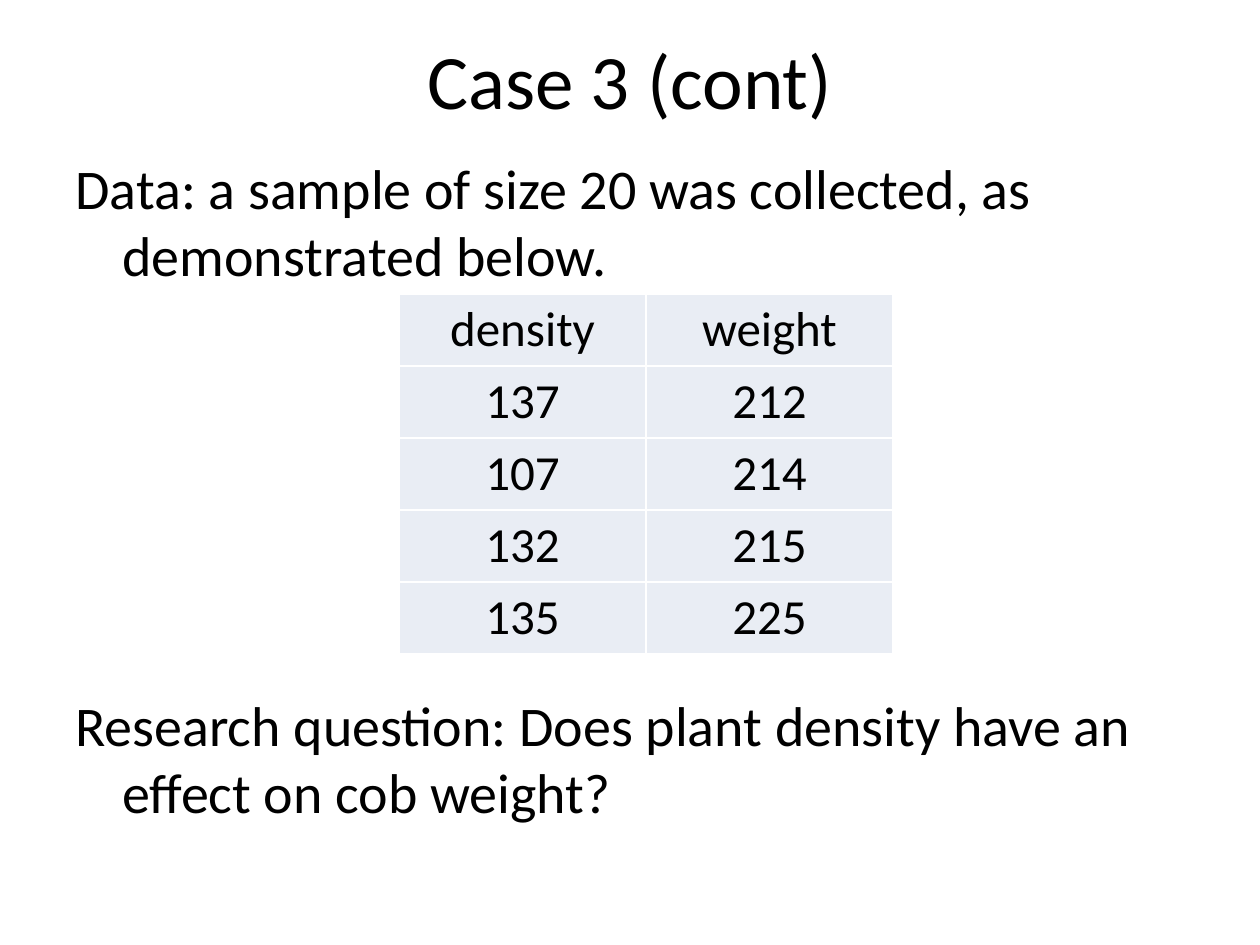
from lxml.etree import SubElement
from pptx import Presentation
from pptx.dml.color import RGBColor
from pptx.enum.text import MSO_ANCHOR as Anchor, PP_ALIGN as Align
from pptx.oxml.ns import qn
from pptx.util import Emu, Pt

SCALE = 914400 / 126


def px(length):
    return Emu(round(length * SCALE))


def color(value):
    return RGBColor.from_string(value)


def apply_format(target, values):
    for name, value in values.items():
        setattr(target, name, value)


class SlideBuilder:
    font = "Calibri"
    ink = "000000"
    cell_fill = "E9EDF4"
    border = "FFFFFF"

    def __init__(self, deck):
        self.slide = deck.slides.add_slide(deck.slide_layouts[6])

    def fill_para(self, para, text, size, **format_values):
        apply_format(para, format_values)
        span = para.add_run()
        span.text = text
        apply_format(span.font, {"name": self.font, "size": Pt(size)})
        span.font.color.rgb = color(self.ink)

    def text_box(self, left, top, width, height, anchor):
        box = self.slide.shapes.add_textbox(*map(px, (left, top, width, height)))
        apply_format(box.text_frame, {"word_wrap": True, "vertical_anchor": anchor})
        return box.text_frame

    def title(self, text, *place):
        frame = self.text_box(*place, Anchor.MIDDLE)
        self.fill_para(frame.paragraphs[0], text, 44, alignment=Align.CENTER)

    def body(self, items, indent, *place):
        frame = self.text_box(*place, Anchor.TOP)
        for index, (text, gap) in enumerate(items):
            para = frame.add_paragraph() if index else frame.paragraphs[0]
            self.fill_para(para, text, 32, space_before=Pt(gap))
            properties = para._p.get_or_add_pPr()
            properties.set("marL", str(px(indent)))
            properties.set("indent", str(-px(indent)))

    def cell_borders(self, cell):
        properties = cell._tc.get_or_add_tcPr()
        for side in ("lnL", "lnR", "lnT", "lnB"):
            line = SubElement(properties, qn(f"a:{side}"), w=str(Pt(1)))
            fill = SubElement(line, qn("a:solidFill"))
            SubElement(fill, qn("a:srgbClr"), val=self.border)

    def table(self, rows, left, top, column_width, row_height):
        columns = len(rows[0])
        size = (column_width * columns, row_height * len(rows))
        frame = self.slide.shapes.add_table(
            len(rows), columns, *map(px, (left, top, *size))
        )
        for row, values in enumerate(rows):
            for column, text in enumerate(values):
                cell = frame.table.cell(row, column)
                self.fill_para(
                    cell.text_frame.paragraphs[0], text, 28, alignment=Align.CENTER
                )
                self.cell_borders(cell)
                cell.fill.solid()
                cell.fill.fore_color.rgb = color(self.cell_fill)


def main():
    deck = Presentation()
    apply_format(deck, {"slide_width": px(1260), "slide_height": px(945)})
    page = SlideBuilder(deck)
    page.title("Case 3 (cont)", 63, 0, 1134, 158)
    statements = [
        ("Data: a sample of size 20 was collected, as demonstrated below.", 0),
        ("Research question: Does plant density have an effect on cob weight?", 230),
    ]
    page.body(statements, 47, 63, 147, 1134, 756)
    samples = [
        ("density", "weight"),
        ("137", "212"),
        ("107", "214"),
        ("132", "215"),
        ("135", "225"),
    ]
    page.table(samples, 399, 294, 247, 72)
    deck.save("out.pptx")


if __name__ == "__main__":
    main()
